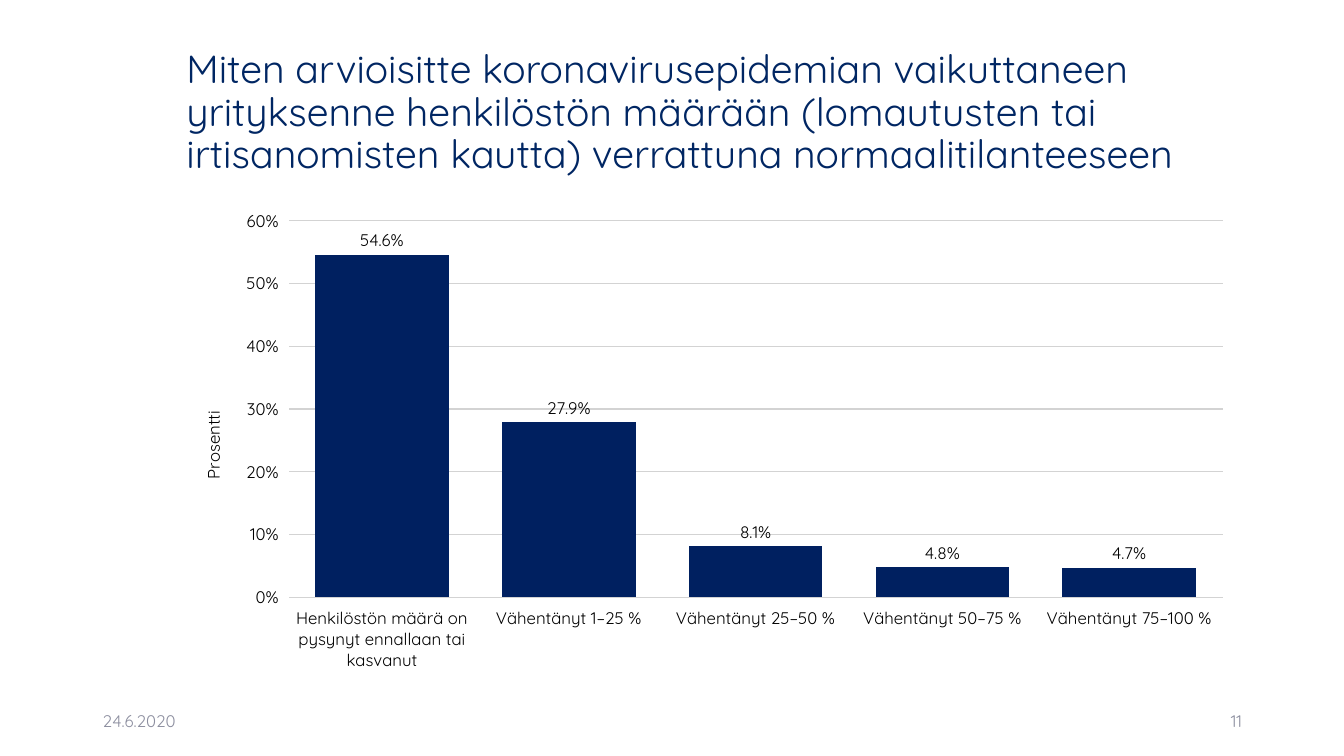
from lxml import etree
from pptx import Presentation, util as u
from pptx.chart.data import CategoryChartData
from pptx.dml.color import RGBColor
from pptx.enum import chart as ch, text
from pptx.oxml.ns import qn

COLORS = {"title": "002663", "bar": "002060", "grid": "D3D3D3",
          "footer": "8C8E9F", "text": "000000"}

STAFF_CHANGE = {
    "Henkilöstön määrä on pysynyt ennallaan tai kasvanut": 0.546,
    "Vähentänyt 1–25 %": 0.279,
    "Vähentänyt 25–50 %": 0.081,
    "Vähentänyt 50–75 %": 0.048,
    "Vähentänyt 75–100 %": 0.047,
}


def color(name):
    return RGBColor.from_string(COLORS[name])


def place(element, index, **fractions):
    """Fix a chart part at fractions of the chart area."""
    for old in element.findall(qn("c:layout")):
        element.remove(old)
    layout = etree.Element(qn("c:layout"))
    manual = etree.SubElement(layout, qn("c:manualLayout"))
    settings = {"xMode": "edge", "yMode": "edge", **fractions}
    if "w" in fractions:
        settings = {"layoutTarget": "inner", **settings}
    for tag, value in settings.items():
        etree.SubElement(manual, qn(f"c:{tag}")).set("val", str(value))
    element.insert(index, layout)


class SurveySlide:
    font_name = "Quicksand"
    small = 12

    def __init__(self, deck):
        self.slide = deck.slides.add_slide(deck.slide_layouts[6])

    def style(self, font, size=small, shade="text"):
        font.name = self.font_name
        font.size = u.Pt(size)
        font.bold = False
        font.color.rgb = color(shade)

    def text_box(self, words, box, size=small, shade="footer",
                 align=text.PP_ALIGN.LEFT, spacing=1.0):
        frame = self.slide.shapes.add_textbox(*map(u.Cm, box)).text_frame
        frame.word_wrap = True
        frame.vertical_anchor = text.MSO_ANCHOR.MIDDLE
        paragraph = frame.paragraphs[0]
        paragraph.text = words
        paragraph.alignment = align
        paragraph.line_spacing = spacing
        self.style(paragraph.font, size, shade)

    def column_chart(self, shares, axis_name, box):
        data = CategoryChartData(number_format="0.0%")
        data.categories = list(shares)
        data.add_series("Series 1", list(shares.values()))
        chart = self.slide.shapes.add_chart(
            ch.XL_CHART_TYPE.COLUMN_CLUSTERED, *map(u.Cm, box), data).chart
        chart.has_legend = False
        chart.has_title = False
        self.style(chart.font)

        plot = chart.plots[0]
        plot.gap_width = 40
        plot.vary_by_categories = False
        bars = plot.series[0].format.fill
        bars.solid()
        bars.fore_color.rgb = color("bar")
        plot.has_data_labels = True
        labels = plot.data_labels
        labels.show_value = True
        labels.position = ch.XL_LABEL_POSITION.OUTSIDE_END
        labels.number_format = "0.0%"
        labels.number_format_is_linked = False
        self.style(labels.font)

        for axis in (chart.category_axis, chart.value_axis):
            axis.format.line.fill.background()
            self.style(axis.tick_labels.font)
        self.percent_axis(chart.value_axis, axis_name)
        place(chart.value_axis.axis_title._element, 1, x=0.02, y=0.43)
        plot_area = chart._chartSpace.chart.plotArea
        place(plot_area, 0, x=0.105, y=0.04, w=0.875, h=0.785)

    def percent_axis(self, axis, name):
        axis.minimum_scale, axis.maximum_scale, axis.major_unit = 0, 0.6, 0.1
        axis.tick_labels.number_format = "0%"
        axis.tick_labels.number_format_is_linked = False
        axis.has_major_gridlines = True
        grid = axis.major_gridlines.format.line
        grid.color.rgb = color("grid")
        grid.width = u.Pt(1)
        caption = axis.axis_title.text_frame
        caption.text = name
        self.style(caption.paragraphs[0].font)


def main():
    deck = Presentation()
    deck.slide_width, deck.slide_height = u.Cm(33.87), u.Cm(19.05)
    survey = SurveySlide(deck)
    survey.text_box(
        "Miten arvioisitte koronavirusepidemian vaikuttaneen yrityksenne "
        "henkilöstön määrään (lomautusten tai irtisanomisten kautta) "
        "verrattuna normaalitilanteeseen",
        (4.45, 1.02, 26.9, 3.68), size=28, shade="title", spacing=0.9)
    survey.column_chart(STAFF_CHANGE, "Prosentti", (4.45, 5.08, 26.9, 12.09))
    survey.text_box("24.6.2020", (2.34, 17.65, 7.62, 1.02))
    survey.text_box("11", (23.93, 17.65, 7.62, 1.02),
                    align=text.PP_ALIGN.RIGHT)
    deck.save("out.pptx")


if __name__ == "__main__":
    main()
